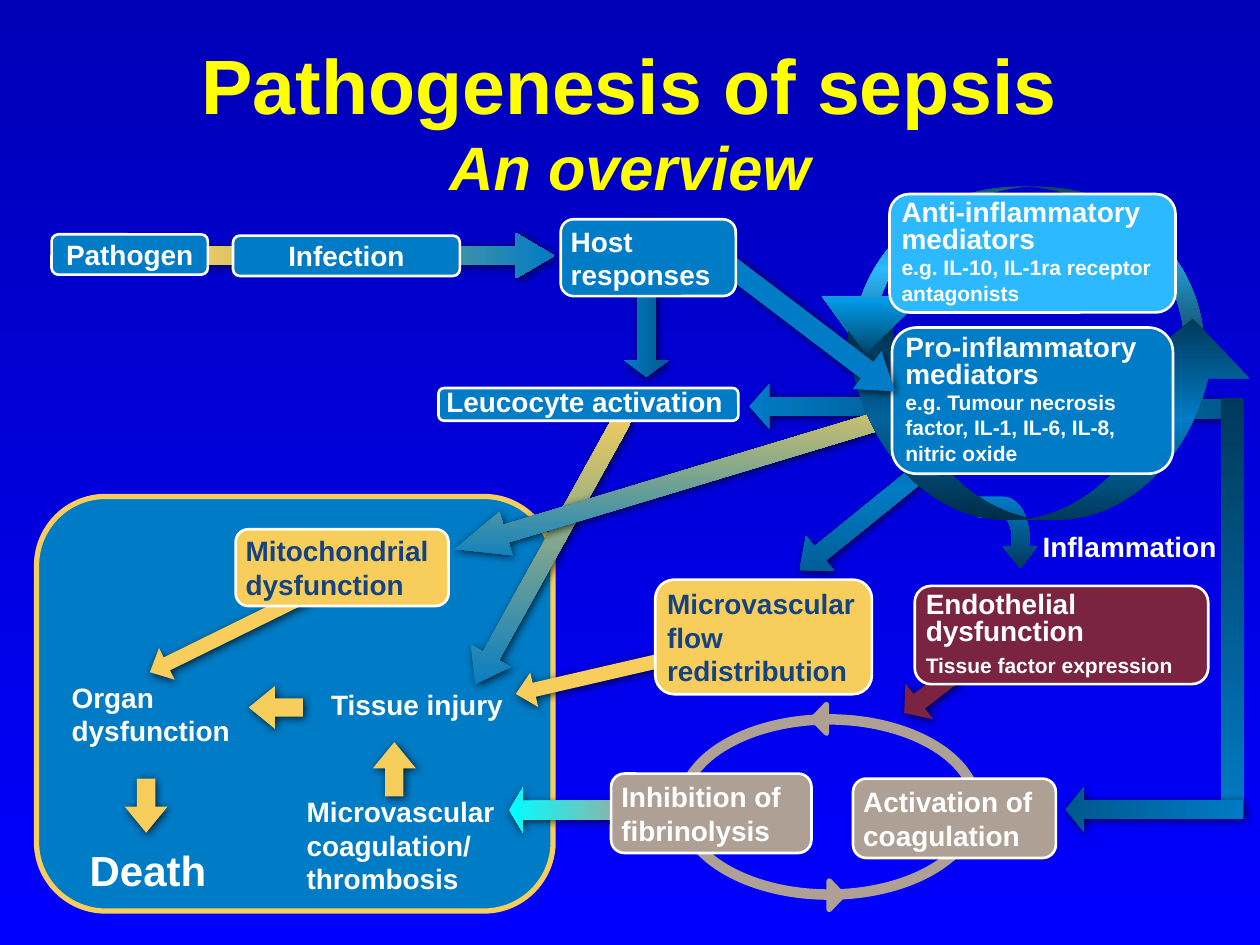
from copy import deepcopy

from lxml.etree import SubElement
from pptx import Presentation
from pptx.dml.color import RGBColor
from pptx.enum.shapes import MSO_SHAPE as Shape
from pptx.enum.text import MSO_ANCHOR as Anchor, PP_ALIGN as Align
from pptx.oxml.ns import qn
from pptx.util import Inches, Pt

YELLOW = RGBColor(0xFF, 0xFF, 0x00)
WHITE = RGBColor(0xFF, 0xFF, 0xFF)
NAVY_TEXT = RGBColor(0x15, 0x43, 0x81)
GOLD = RGBColor(0xF7, 0xCE, 0x5B)
BLUE = RGBColor(0x00, 0x7B, 0xC5)
DEEP_BLUE = RGBColor(0x00, 0x58, 0x8D)
DARK_BLUE = RGBColor(0x00, 0x39, 0x5B)
SKY = RGBColor(0x2D, 0xB9, 0xFF)
DARK_SKY = RGBColor(0x15, 0x56, 0x76)
HEAD_TOP = RGBColor(0x00, 0x9D, 0xEC)
HEAD_BOTTOM = RGBColor(0x00, 0x49, 0x6D)
CYAN = RGBColor(0x00, 0xFF, 0xFF)
TAUPE = RGBColor(0xAF, 0xA0, 0x95)
WINE = RGBColor(0x7B, 0x24, 0x41)
BACK_TOP = RGBColor(0x00, 0x00, 0xB6)
BACK_BOTTOM = RGBColor(0x00, 0x00, 0xFF)


def paint(fill, colours, angle=90):
    """Fill with nothing, one colour, or an even gradient (clockwise angle)."""
    if colours is None:
        fill.background()
    elif isinstance(colours, RGBColor):
        fill.solid()
        fill.fore_color.rgb = colours
    else:
        fill.gradient()
        fill.gradient_angle = (360 - angle) % 360
        stop_list = fill.gradient_stops[0]._gs.getparent()
        for _ in colours[2:]:
            stop_list.append(deepcopy(stop_list[0]))
        for i, (stop, colour) in enumerate(zip(fill.gradient_stops, colours)):
            stop.position = i / (len(colours) - 1)
            stop.color.rgb = colour
        stop_list.getparent().set("rotWithShape", "0")


def write(frame, *paragraphs, size=16, colour=WHITE, align=Align.LEFT,
          spacing=None, before=0, inset=0.05, wrap=True):
    """Write paragraphs; each is a text, or a (text, size, line spacing) tuple."""
    frame.word_wrap = wrap
    frame.vertical_anchor = Anchor.MIDDLE
    frame.margin_left = frame.margin_right = Inches(inset)
    frame.margin_top = frame.margin_bottom = 0
    for i, entry in enumerate(paragraphs):
        text, points, lines = (entry, size, spacing) if isinstance(entry, str) else entry
        paragraph = frame.add_paragraph() if i else frame.paragraphs[0]
        paragraph.text = text
        paragraph.alignment = align
        paragraph.space_before = Pt(before if i else 0)
        if lines:
            paragraph.line_spacing = lines
        for run in paragraph.runs:
            run.font.name = "Arial"
            run.font.size = Pt(points)
            run.font.bold = True
            run.font.color.rgb = colour
        for line_break in paragraph._p.findall(qn("a:br")):
            line_break.append(deepcopy(paragraph.runs[0]._r.rPr))


def add_form(slide, kind, at, fill, angle=90, line=None, weight=1.5,
             rotation=0, adjust=(), flips=""):
    form = slide.shapes.add_shape(kind, *map(Inches, at))
    form.shadow.inherit = False
    form.rotation = rotation
    for i, value in enumerate(adjust):
        form.adjustments[i] = value
    for axis in flips:
        form._element.spPr.xfrm.set("flip" + axis, "1")
    paint(form.fill, fill, angle)
    paint(form.line.fill, line)
    if line is not None:
        form.line.width = Pt(weight)
    return form


def add_box(slide, at, *paragraphs, fill=None, line=WHITE, **text_format):
    box = add_form(slide, Shape.ROUNDED_RECTANGLE, at, fill, line=line)
    write(box.text_frame, *paragraphs, **text_format)


def add_label(slide, at, *paragraphs, **text_format):
    add_box(slide, at, *paragraphs, line=None, **text_format)


def add_arrow(slide, at, fill, head, rotation=0, shaft=0.405, angle=0, flips="V"):
    """Add a block arrow that points down before its rotation."""
    arrow = add_form(slide, Shape.UP_ARROW, at, fill, angle, rotation=rotation,
                     adjust=(shaft, head), flips=flips)
    effects = arrow._element.spPr.find(qn("a:effectLst"))
    shadow = SubElement(effects, qn("a:outerShdw"), blurRad=str(Pt(5)),
                        dist=str(Pt(1.4)), dir="2700000", algn="ctr", rotWithShape="0")
    black = SubElement(shadow, qn("a:srgbClr"), val="000000")
    SubElement(black, qn("a:alpha"), val="75000")


def add_outline(slide, points, fill):
    start, *rest = [(Inches(x), Inches(y)) for x, y in points]
    builder = slide.shapes.build_freeform(*start)
    builder.add_line_segments(rest, close=True)
    outline = builder.convert_to_shape()
    outline.shadow.inherit = False
    paint(outline.fill, fill)
    outline.line.fill.background()


def curve(*controls, steps=10):
    """Points along a cubic curve given by its four control points."""
    def place(t, a, b, c, d):
        u = 1 - t
        return u**3 * a + 3 * u * u * t * b + 3 * u * t * t * c + t**3 * d
    return [tuple(place(i / steps, *axis) for axis in zip(*controls))
            for i in range(steps + 1)]


def add_outcomes(slide):
    add_form(slide, Shape.ROUNDED_RECTANGLE, (0.29, 3.94, 4.1, 3.29), BLUE,
             line=GOLD, weight=3)
    add_label(slide, (2.54, 5.44, 1.54, 0.3), "Tissue injury", align=Align.CENTER)
    add_label(slide, (2.34, 6.26, 1.77, 0.89), "Microvascular coagulation/\vthrombosis")
    add_label(slide, (0.49, 5.37, 1.48, 0.59), "Organ dysfunction")
    add_label(slide, (0.64, 6.68, 1.28, 0.44), "Death", size=24)
    add_arrow(slide, (1.7, 4.29, 0.28, 1.45), GOLD, 0.537, 63.8)
    add_box(slide, (1.87, 4.2, 1.69, 0.61), "Mitochondrial dysfunction",
            fill=GOLD, colour=NAVY_TEXT)
    for left, top, rotation, flips in ((0.99, 6.18, 0, "V"), (2.96, 5.89, 0, ""),
                                       (2.02, 5.4, 90, "V")):
        add_arrow(slide, (left, top, 0.34, 0.43), GOLD, 0.611, rotation, 0.426, flips=flips)


def add_coagulation(slide):
    add_form(slide, Shape.OVAL, (5.41, 5.71, 2.34, 1.39), None, line=TAUPE, weight=6)
    for left, top, rotation in ((6.52, 7.05, 90), (6.39, 5.65, 270)):
        add_form(slide, Shape.ISOSCELES_TRIANGLE, (left, top, 0.23, 0.11), TAUPE,
                 line=TAUPE, weight=3, rotation=rotation)
    add_box(slide, (6.77, 6.18, 1.61, 0.63), "Activation of coagulation", fill=TAUPE)
    add_arrow(slide, (4.39, 5.9, 0.36, 1.06), (CYAN, TAUPE), 0.308, 90)
    add_box(slide, (4.85, 6.14, 1.59, 0.63), "Inhibition of fibrinolysis", fill=TAUPE)


def add_inflammation(slide):
    add_arrow(slide, (4.66, 4.62, 0.28, 1.45), GOLD, 0.537, 77)
    add_arrow(slide, (7.57, 4.49, 0.36, 1.45), WINE, 0.422, 52.2)
    add_box(slide, (7.26, 4.65, 2.33, 0.78), "Endothelial dysfunction",
            ("Tissue factor expression", 12, 0.8), fill=WINE, spacing=0.8, before=6)
    add_box(slide, (5.2, 4.6, 1.72, 0.91), "Microvascular flow redistribution",
            fill=GOLD, colour=NAVY_TEXT)
    add_arrow(slide, (6.54, 2.45, 0.36, 1.55), (BLUE, DEEP_BLUE), 0.451, 90)
    add_arrow(slide, (6.95, 2.88, 0.36, 2.02), (DEEP_BLUE, BLUE, DEEP_BLUE), 0.588, 51,
              angle=90)
    add_arrow(slide, (4.18, 3.16, 0.36, 2.42), (BLUE, GOLD), 0.705, 29, angle=90)
    inflammation = slide.shapes.add_textbox(*map(Inches, (8.27, 4.2, 1.39, 0.27)))
    write(inflammation.text_frame, "Inflammation", align=Align.CENTER, inset=0, wrap=False)
    outer_bend = curve((8.17, 4.27), (8.17, 4.09), (8.08, 3.94), (7.96, 3.94))
    inner_bend = curve((7.96, 4.11), (8, 4.11), (8.03, 4.18), (8.03, 4.27))
    add_outline(slide, [(8.1, 4.51), (8.23, 4.34), (8.17, 4.34), *outer_bend,
                        (7.76, 3.94), (7.76, 4.11), *inner_bend,
                        (8.03, 4.34), (7.96, 4.34)], (BLUE, DARK_BLUE))
    add_arrow(slide, (8.81, 2.54, 0.38, 1.41), (BLUE, DEEP_BLUE), 0.381, 90)
    add_form(slide, Shape.RECTANGLE, (9.69, 3.16, 0.18, 3.33), (DARK_BLUE, BLUE))
    add_arrow(slide, (5.36, 1.76, 0.36, 4.03), (BLUE, GOLD), 1.176, 73.2, angle=90)
    add_arrow(slide, (8.98, 5.72, 0.36, 1.41), (DEEP_BLUE, BLUE), 0.411, 90)


def add_mediators(slide):
    add_form(slide, Shape.CURVED_RIGHT_ARROW, (7.35, 0.58, 1.31, 3.11),
             (DARK_SKY, SKY, DARK_SKY), rotation=90, adjust=(0.119, 0.593, 0.333))
    add_box(slide, (3.48, 3.08, 2.38, 0.26), "Leucocyte activation", fill=BLUE, spacing=0.8)
    add_form(slide, Shape.CURVED_RIGHT_ARROW, (7.55, 1.71, 1.6, 3.24),
             (DARK_BLUE, BLUE, DARK_BLUE), rotation=90, adjust=(0.223, 0.629, 0.295),
             flips="HV")
    add_outline(slide, [(6.54, 2.36), (7.33, 2.36), (6.87, 2.8)], (HEAD_TOP, HEAD_BOTTOM))
    for at, name, examples, fill in (
            ((7.06, 1.54, 2.27, 0.94), "Anti-inflammatory",
             "e.g. IL-10, IL-1ra receptor antagonists", SKY),
            ((7.08, 2.6, 2.23, 1.16), "Pro-inflammatory",
             "e.g. Tumour necrosis factor, IL-1, IL-6, IL-8, \vnitric oxide", BLUE)):
        add_box(slide, at, name, "mediators", (examples, 12, None), fill=fill, spacing=0.8)


def add_host_response(slide):
    add_arrow(slide, (4.95, 1.74, 0.36, 1.25), (BLUE, DEEP_BLUE), 0.365)
    add_arrow(slide, (6.26, 1.79, 0.38, 1.64), BLUE, 0.733, 307.2, 0.437)
    add_arrow(slide, (2.76, 0.57, 0.36, 2.92), (GOLD, BLUE), 0.85, 270)
    add_box(slide, (0.41, 1.86, 1.24, 0.32), "Pathogen", fill=BLUE, align=Align.CENTER)
    add_box(slide, (1.85, 1.87, 1.8, 0.32), "Infection", fill=BLUE, align=Align.CENTER)
    add_box(slide, (4.45, 1.74, 1.39, 0.61), "Host \vresponses", fill=BLUE)


def main():
    deck = Presentation()
    deck.slide_width, deck.slide_height = Inches(10), Inches(7.5)
    slide = deck.slides.add_slide(deck.slide_layouts[5])
    paint(slide.background.fill, (BACK_TOP, BACK_BOTTOM))
    title = slide.shapes.title
    title.left, title.top, title.width, title.height = map(Inches, (0.75, 0.33, 8.5, 1.25))
    write(title.text_frame, "Pathogenesis of sepsis\vAn overview", size=44,
          colour=YELLOW, align=Align.CENTER)
    subtitle = title.text_frame.paragraphs[0].runs[1]
    subtitle.font.size = Pt(35)
    subtitle.font.italic = True
    add_outcomes(slide)
    add_coagulation(slide)
    add_inflammation(slide)
    add_mediators(slide)
    add_host_response(slide)
    deck.save("out.pptx")


if __name__ == "__main__":
    main()
